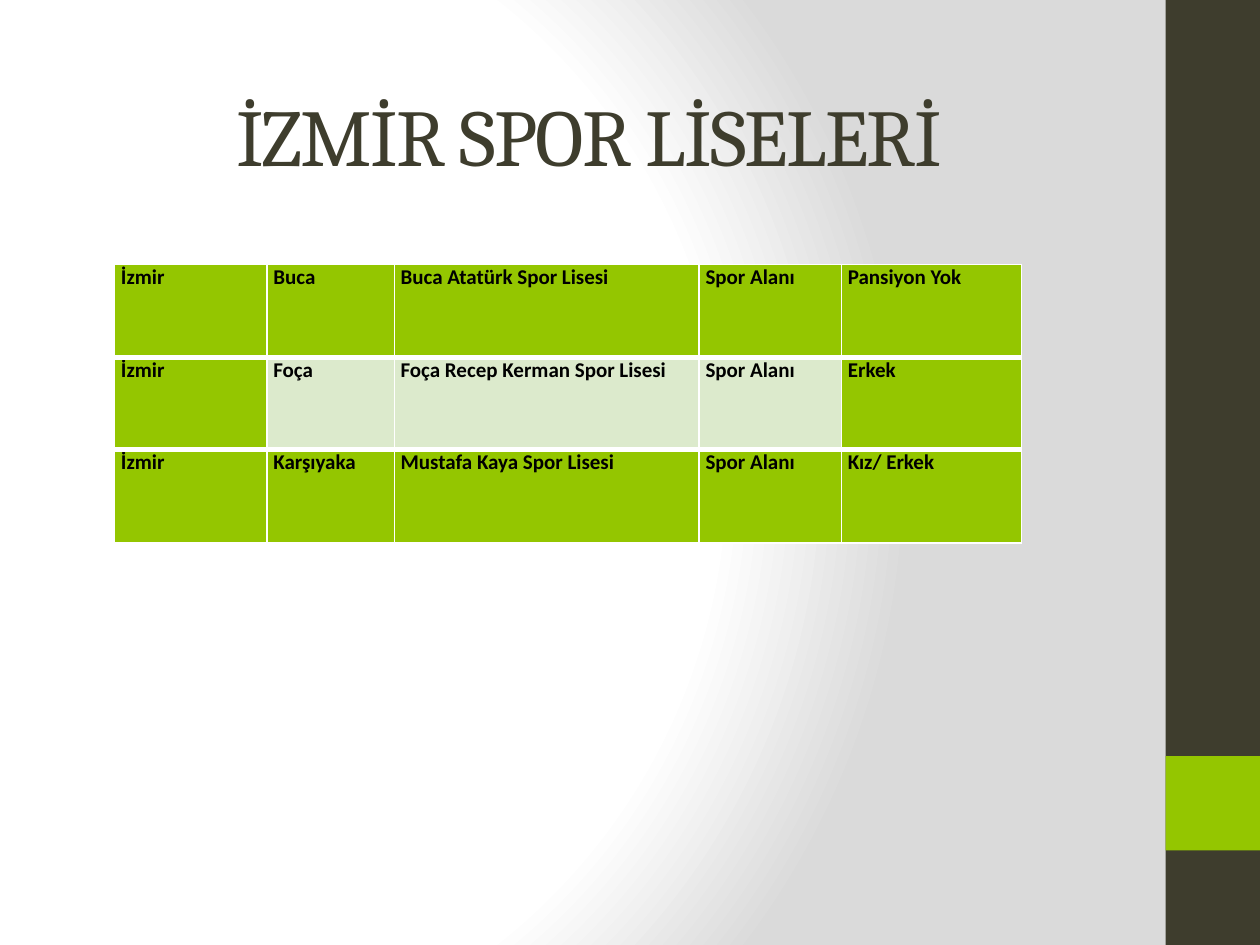
import pptx
import pptx.dml.color
import pptx.enum.shapes
import pptx.enum.text
import pptx.oxml
import pptx.oxml.ns
import pptx.util

Inches, Pt = pptx.util.Inches, pptx.util.Pt
RGBColor = pptx.dml.color.RGBColor
NS = pptx.oxml.ns.nsdecls("a")

DARK = RGBColor(0x3E, 0x3D, 0x2D)
GREEN = RGBColor(0x94, 0xC6, 0x00)
PALE = RGBColor(0xDC, 0xEA, 0xCC)
BLACK = RGBColor(0, 0, 0)
WHITE = RGBColor(0xFF, 0xFF, 0xFF)
GREY = RGBColor(0xDA, 0xDA, 0xDA)

TITLE = "İZMİR SPOR LİSELERİ"
SCHOOLS = [
    ("İzmir", "Buca", "Buca Atatürk Spor Lisesi", "Spor Alanı", "Pansiyon Yok"),
    ("İzmir", "Foça", "Foça Recep Kerman Spor Lisesi", "Spor Alanı", "Erkek"),
    ("İzmir", "Karşıyaka", "Mustafa Kaya Spor Lisesi", "Spor Alanı", "Kız/ Erkek"),
]
PALE_CELLS = {(1, 1), (1, 2), (1, 3)}
COL_WIDTHS = [1.21, 1.01, 2.42, 1.13, 1.43]
ROW_HEIGHTS = [0.74, 0.73, 0.74]
# Border widths in points for each row
ROW_BORDERS = [
    {"L": 1, "R": 1, "T": 1, "B": 3},
    {"L": 1, "R": 1, "T": 1, "B": 1},
    {"L": 1, "R": 1, "T": 3, "B": 1},
]
BACKGROUND_STOPS = [(0, WHITE), (75, WHITE), (100, GREY)]
SIDE_BLOCKS = [(0, 7.5, DARK), (6, 0.75, GREEN)]  # top, height, colour
TITLE_FONT = {"name": "Cambria", "size": Pt(46)}
CELL_FONT = {"name": "Calibri", "size": Pt(12), "bold": True}
NO_MARGINS = dict.fromkeys(
    ("margin_left", "margin_top", "margin_right", "margin_bottom"), 0)


def set_attrs(obj, values):
    for name, value in values.items():
        setattr(obj, name, value)


def add_run(p, text, font, color):
    r = p.add_run()
    r.text = text
    set_attrs(r.font, font)
    r.font.color.rgb = color
    return r


def set_background(s):
    s.background.fill.solid()
    solid = s.background._cSld.bg.bgPr[0]
    stops = "".join(
        f'<a:gs pos="{pos * 1000}"><a:srgbClr val="{color}"/></a:gs>'
        for pos, color in BACKGROUND_STOPS)
    grad = pptx.oxml.parse_xml(
        f'<a:gradFill {NS} rotWithShape="1"><a:gsLst>{stops}</a:gsLst>'
        '<a:path path="circle">'
        '<a:fillToRect l="20000" t="50000" r="100000" b="50000"/>'
        '</a:path></a:gradFill>')
    solid.getparent().replace(solid, grad)


def set_borders(cell, widths):
    tcPr = cell._tc.get_or_add_tcPr()
    for i, (side, width) in enumerate(widths.items()):
        tcPr.insert(i, pptx.oxml.parse_xml(
            f'<a:ln{side} {NS} w="{Pt(width)}"><a:solidFill>'
            f'<a:srgbClr val="{WHITE}"/></a:solidFill></a:ln{side}>'))


def add_side_blocks(s):
    for top, height, color in SIDE_BLOCKS:
        sp = s.shapes.add_shape(
            pptx.enum.shapes.MSO_SHAPE.RECTANGLE,
            Inches(9.25), Inches(top), Inches(0.75), Inches(height))
        sp.shadow.inherit = False
        sp.fill.solid()
        sp.fill.fore_color.rgb = color
        sp.line.fill.background()


def add_title(s):
    tf = s.shapes.add_textbox(
        Inches(0.51), Inches(0.44), Inches(8.33), Inches(1.25)).text_frame
    tf.word_wrap = True
    tf.vertical_anchor = pptx.enum.text.MSO_ANCHOR.MIDDLE
    p = tf.paragraphs[0]
    p.alignment = pptx.enum.text.PP_ALIGN.CENTER
    r = add_run(p, TITLE, TITLE_FONT, DARK)
    r._r.get_or_add_rPr().set("spc", "-100")


def add_school_table(s):
    table = s.shapes.add_table(
        len(SCHOOLS), len(COL_WIDTHS), Inches(0.91), Inches(2.1),
        Inches(sum(COL_WIDTHS)), Inches(sum(ROW_HEIGHTS))).table
    for col, width in zip(table.columns, COL_WIDTHS):
        col.width = Inches(width)
    for row, height in zip(table.rows, ROW_HEIGHTS):
        row.height = Inches(height)
    for i, school in enumerate(SCHOOLS):
        for j, text in enumerate(school):
            cell = table.cell(i, j)
            set_attrs(cell, NO_MARGINS)
            cell.fill.solid()
            cell.fill.fore_color.rgb = PALE if (i, j) in PALE_CELLS else GREEN
            set_borders(cell, ROW_BORDERS[i])
            p = cell.text_frame.paragraphs[0]
            p.space_before = Pt(4.1)
            p._p.get_or_add_pPr().set("marL", str(Inches(0.05)))
            add_run(p, text, CELL_FONT, BLACK)


def main():
    prs = pptx.Presentation()
    prs.slide_width, prs.slide_height = Inches(10), Inches(7.5)
    s = prs.slides.add_slide(prs.slide_layouts[6])
    set_background(s)
    add_side_blocks(s)
    add_title(s)
    add_school_table(s)
    prs.save("out.pptx")


if __name__ == "__main__":
    main()
